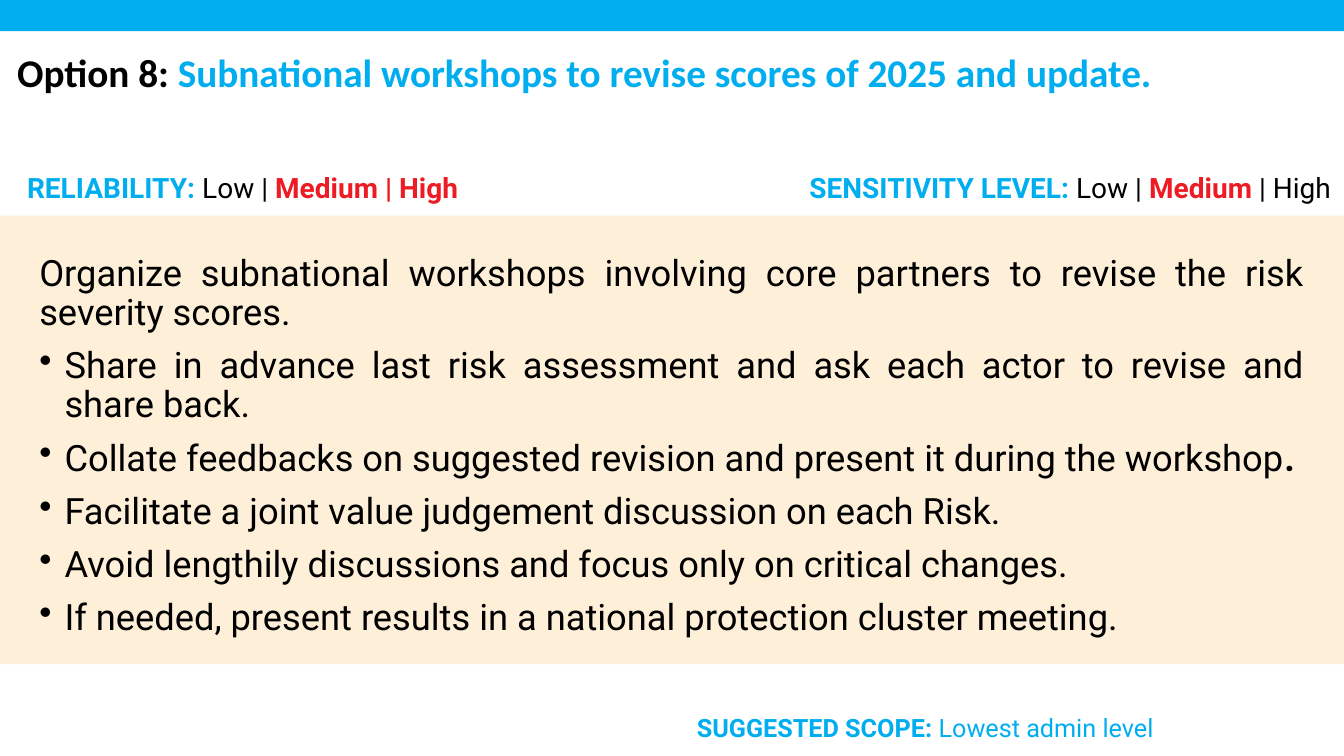
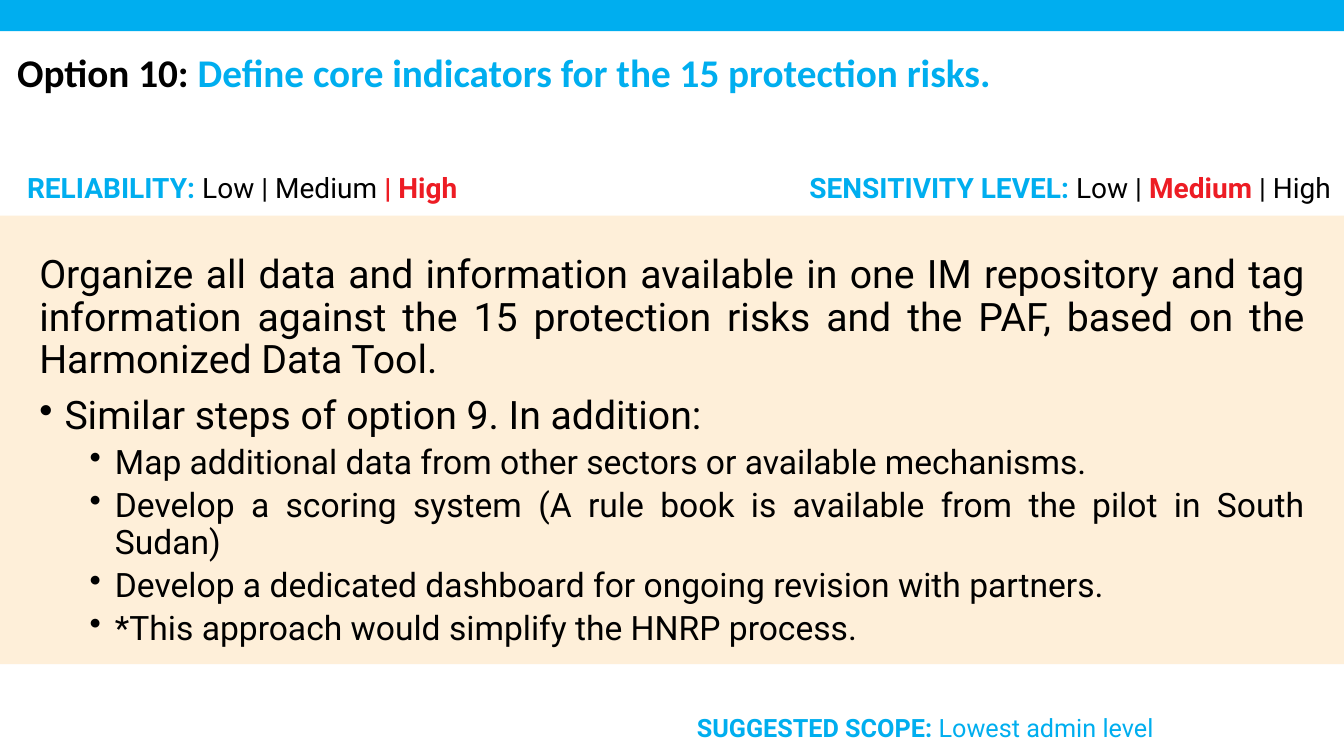
from dataclasses import dataclass

from lxml import etree
from pptx import Presentation
from pptx.dml import color
from pptx.enum import shapes, text
from pptx.oxml import ns
from pptx.util import Inches, Pt


@dataclass(frozen=True)
class Theme:
    """Colours, fonts and type sizes shared by the slides."""
    blue: str = "00AEEF"
    red: str = "ED1C24"
    black: str = "000000"
    cream: str = "FEEFD9"
    title_font: str = "Calibri"
    body_font: str = "Roboto"
    title_size: float = 28
    rating_size: float = 20
    scope_size: float = 18
    detail_size: float = 24


THEME = Theme()
WIDTH, HEIGHT = 13.33, 7.5
BAND_BOX = (0, 0, WIDTH, 0.31)
TITLE_BOX = (0.17, 0.43, 12.79, 0.57)
RELIABILITY_BOX = (0.17, 1.64, 4.63, 0.44)
SENSITIVITY_BOX = (7.93, 1.64, 5.4, 0.44)
BODY_BOX = (0, 2.14, WIDTH, 4.45)
SCOPE_BOX = (6.56, 7.02, 4.98, 0.4)
DEFAULT_INSETS = (0.1, 0.05, 0.1, 0.05)

RUN_STYLES = {
    "label": {"color": THEME.blue, "bold": True},
    "value": {"color": THEME.blue, "bold": False},
    "heading": {"color": THEME.black, "bold": True},
    "plain": {"color": THEME.black, "bold": False},
    "choice": {"color": THEME.red, "bold": True},
}
PARAGRAPH_STYLES = {
    "intro": {"level": 0, "margin": 0, "space": 10},
    "point": {"level": 0, "margin": 0.25, "space": 10},
    "detail": {"level": 1, "margin": 0.75, "space": 5},
}

SENSITIVITY = [("SENSITIVITY LEVEL:", "label"), (" Low | ", "plain"),
               ("Medium", "choice"), (" | High", "plain")]
SCOPE = [("SUGGESTED SCOPE: ", "label"), ("Lowest admin level", "value")]

OPTIONS = [
    {
        "title": [("Option 8: ", "heading"),
                  ("Subnational workshops to revise scores of 2025 and update.", "label")],
        "reliability": [("RELIABILITY: ", "label"), ("Low |", "plain"),
                        (" Medium | High", "choice")],
        "body_size": 25.9,
        "body": [
            ("intro", [("Organize subnational workshops involving core partners to revise "
                        "the risk severity scores.", "plain")]),
            ("point", [("Share in advance last risk assessment and ask each actor to revise "
                        "and share back.", "plain")]),
            ("point", [("Collate feedbacks on suggested revision and present it during "
                        "the workshop", "plain"), (".", "heading")]),
            ("point", [("Facilitate a joint value judgement discussion on each Risk.", "plain")]),
            ("point", [("Avoid lengthily discussions and focus only on critical changes.",
                        "plain")]),
            ("point", [("If needed, present results in a national protection cluster meeting.",
                        "plain")]),
        ],
    },
    {
        "title": [("Option 10: ", "heading"),
                  ("Define core indicators for the 15 protection risks.", "label")],
        "reliability": [("RELIABILITY: ", "label"), ("Low | Medium", "plain"),
                        (" | High", "choice")],
        "body_size": 28,
        "body": [
            ("intro", [("Organize all data and information available in one IM repository and "
                        "tag information against the 15 protection risks and the PAF, based on "
                        "the Harmonized Data Tool.", "plain")]),
            ("point", [("Similar steps of option 9. In addition:", "plain")]),
            ("detail", [("Map additional data from other sectors or available mechanisms.",
                         "plain")]),
            ("detail", [("Develop a scoring system (A rule book is available from the pilot "
                         "in South Sudan)", "plain")]),
            ("detail", [("Develop a dedicated dashboard for ongoing revision with partners.",
                         "plain")]),
            ("detail", [("*This approach would simplify the HNRP process.", "plain")]),
        ],
    },
]


def set_attributes(target, values):
    """Set each named attribute of the target."""
    for name, value in values.items():
        setattr(target, name, value)


def place(shape, box):
    """Move a shape to a box given in inches."""
    names = ("left", "top", "width", "height")
    set_attributes(shape, dict(zip(names, map(Inches, box))))


def format_frame(frame, insets=DEFAULT_INSETS):
    """Give a text frame its insets, wrapping and top anchor."""
    names = ("margin_left", "margin_top", "margin_right", "margin_bottom")
    set_attributes(frame, dict(zip(names, map(Inches, insets))))
    set_attributes(frame, {"word_wrap": True, "auto_size": text.MSO_AUTO_SIZE.NONE,
                           "vertical_anchor": text.MSO_ANCHOR.TOP})


def add_runs(paragraph, runs, size, font_name):
    """Add styled runs to a paragraph."""
    for words, style_name in runs:
        style = RUN_STYLES[style_name]
        run = paragraph.add_run()
        run.text = words
        set_attributes(run.font, {"name": font_name, "size": Pt(size), "bold": style["bold"]})
        run.font.color.rgb = color.RGBColor.from_string(style["color"])


def add_bullet(paragraph, margin):
    """Give a paragraph a hanging bullet."""
    properties = paragraph._p.get_or_add_pPr()
    properties.set("marL", str(Inches(margin)))
    properties.set("indent", str(Inches(-0.25)))
    etree.SubElement(properties, ns.qn("a:buChar")).set("char", "•")


def add_panel(slide, box, fill):
    """Add a plain filled rectangle."""
    shape = slide.shapes.add_shape(shapes.MSO_SHAPE.RECTANGLE, *map(Inches, box))
    shape.shadow.inherit = False
    shape.fill.solid()
    shape.fill.fore_color.rgb = color.RGBColor.from_string(fill)
    shape.line.fill.background()
    return shape


def add_title(slide, box, runs):
    """Place and format the title placeholder."""
    title = slide.shapes.title
    place(title, box)
    format_frame(title.text_frame, (0, 0.05, 0.1, 0.05))
    paragraph = title.text_frame.paragraphs[0]
    paragraph.alignment = text.PP_ALIGN.LEFT
    add_runs(paragraph, runs, THEME.title_size, THEME.title_font)


def add_label(slide, box, runs, size, alignment=text.PP_ALIGN.LEFT):
    """Add one line of styled text."""
    frame = slide.shapes.add_textbox(*map(Inches, box)).text_frame
    format_frame(frame)
    frame.paragraphs[0].alignment = alignment
    add_runs(frame.paragraphs[0], runs, size, THEME.body_font)


def add_body(slide, box, paragraphs, size):
    """Add the panel with the introduction and its bullets."""
    frame = add_panel(slide, box, THEME.cream).text_frame
    format_frame(frame, (0.39, 0.39, 0.39, 0.05))
    for index, (kind, runs) in enumerate(paragraphs):
        style = PARAGRAPH_STYLES[kind]
        paragraph = frame.add_paragraph() if index else frame.paragraphs[0]
        if style["margin"]:
            add_bullet(paragraph, style["margin"])
        set_attributes(paragraph, {
            "level": style["level"],
            "alignment": text.PP_ALIGN.JUSTIFY,
            "line_spacing": 0.9,
            "space_before": Pt(style["space"] if index else 0),
        })
        paragraph_size = THEME.detail_size if kind == "detail" else size
        add_runs(paragraph, runs, paragraph_size, THEME.body_font)


def add_option_slide(presentation, option):
    """Add a slide describing one option."""
    slide = presentation.slides.add_slide(presentation.slide_layouts[5])
    add_panel(slide, BAND_BOX, THEME.blue)
    add_title(slide, TITLE_BOX, option["title"])
    add_label(slide, RELIABILITY_BOX, option["reliability"], THEME.rating_size)
    add_label(slide, SENSITIVITY_BOX, SENSITIVITY, THEME.rating_size)
    add_body(slide, BODY_BOX, option["body"], option["body_size"])
    add_label(slide, SCOPE_BOX, SCOPE, THEME.scope_size, text.PP_ALIGN.RIGHT)


def main():
    """Build and save the presentation."""
    presentation = Presentation()
    set_attributes(presentation, {"slide_width": Inches(WIDTH), "slide_height": Inches(HEIGHT)})
    for option in OPTIONS:
        add_option_slide(presentation, option)
    presentation.save("out.pptx")


if __name__ == "__main__":
    main()
